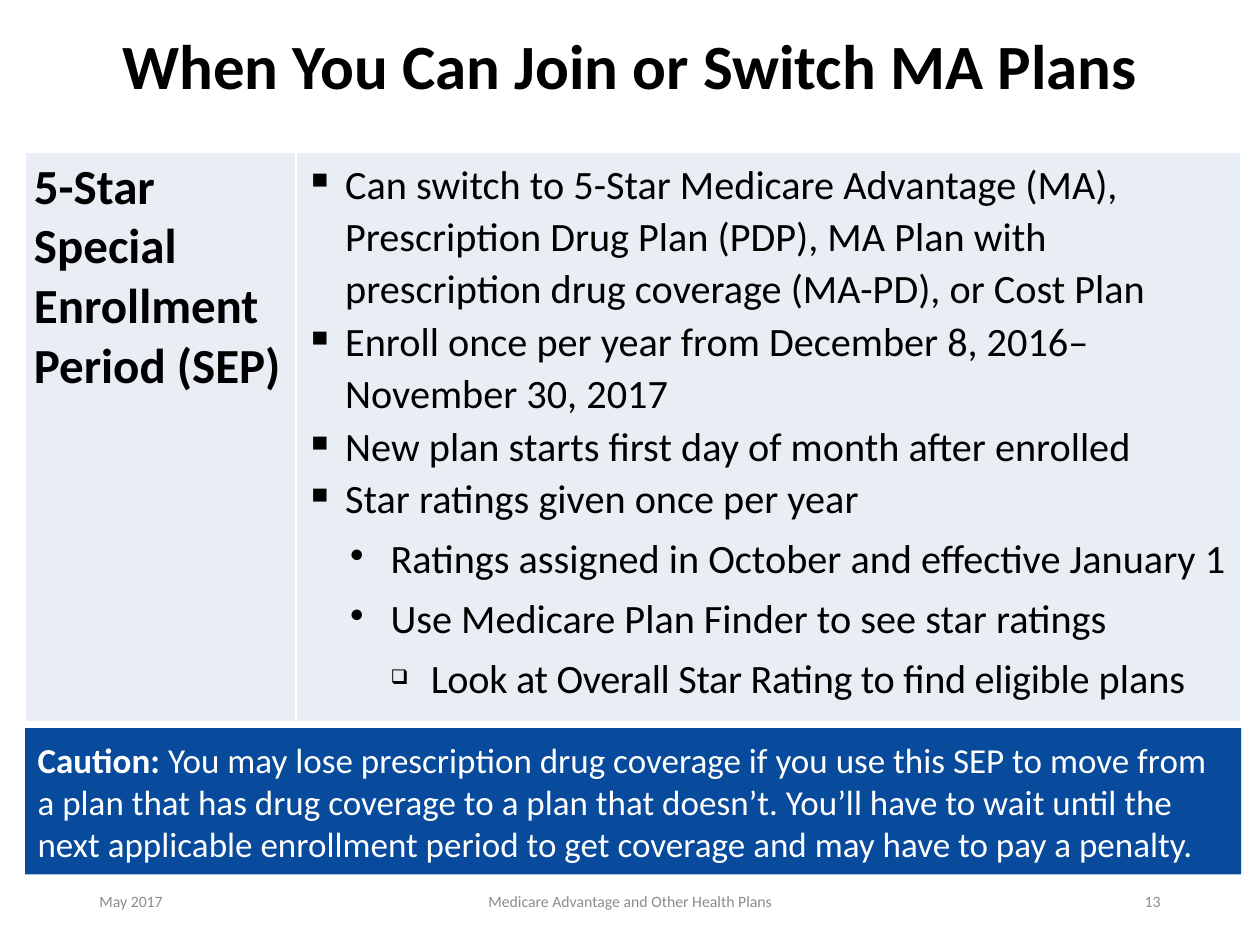
"""Build the slide on joining or switching MA plans."""
from dataclasses import dataclass

from lxml import etree
from pptx import Presentation
from pptx import util as u
from pptx.dml.color import RGBColor
from pptx.enum import shapes, text
from pptx.oxml import ns


@dataclass(frozen=True)
class Theme:
    font: str = "Calibri"
    ink: str = "000000"
    white: str = "FFFFFF"
    cell: str = "E9EDF4"
    caution: str = "084A9C"
    muted: str = "8C8C8C"
    title_size: int = 36
    heading_size: int = 28
    body_size: int = 23
    caution_size: int = 20
    footer_size: int = 9


@dataclass(frozen=True)
class Level:
    bullet: str
    margin: float
    line: int = 0
    before: int = 0
    scale: int = 100


class SlideBuilder:
    def __init__(self, slide, theme):
        self.slide = slide
        self.theme = theme

    def add_run(self, para, words, size, color, bold=False):
        span = para.add_run()
        span.text = words
        span.font.name = self.theme.font
        span.font.size = u.Pt(size)
        span.font.bold = bold
        span.font.color.rgb = RGBColor.from_string(color)
        return span

    def add_text(self, place, words, size, color, align, bold=False, spacing=None):
        box = self.slide.shapes.add_textbox(*map(u.Inches, place))
        frame = box.text_frame
        frame.word_wrap = True
        frame.vertical_anchor = text.MSO_ANCHOR.MIDDLE
        para = frame.paragraphs[0]
        para.alignment = align
        para.line_spacing = spacing
        self.add_run(para, words, size, color, bold)

    def add_banner(self, place, lead, words):
        box = self.slide.shapes.add_shape(
            shapes.MSO_SHAPE.RECTANGLE, *map(u.Inches, place))
        box.shadow.inherit = False
        box.fill.solid()
        box.fill.fore_color.rgb = RGBColor.from_string(self.theme.caution)
        box.line.fill.background()
        frame = box.text_frame
        frame.word_wrap = True
        frame.vertical_anchor = text.MSO_ANCHOR.MIDDLE
        para = frame.paragraphs[0]
        para.alignment = text.PP_ALIGN.LEFT
        for part, bold in ((lead, True), (words, False)):
            self.add_run(para, part, self.theme.caution_size, self.theme.white, bold)

    def add_table(self, place, widths):
        frame = self.slide.shapes.add_table(1, len(widths), *map(u.Inches, place))
        table = frame.table
        table.first_row = table.horz_banding = False
        for column, width in zip(table.columns, widths):
            column.width = u.Inches(width)
        for cell in table.iter_cells():
            self.style_cell(cell)
        return table

    def style_cell(self, cell):
        cell.margin_left = cell.margin_right = u.Inches(0.07)
        cell.margin_top = cell.margin_bottom = u.Inches(0.04)
        properties = cell._tc.get_or_add_tcPr()
        for side, width in (("L", 1), ("R", 1), ("T", 1), ("B", 3)):
            border = etree.SubElement(properties, ns.qn(f"a:ln{side}"), w=str(u.Pt(width)))
            fill = etree.SubElement(border, ns.qn("a:solidFill"))
            etree.SubElement(fill, ns.qn("a:srgbClr"), val=self.theme.white)
        cell.fill.solid()
        cell.fill.fore_color.rgb = RGBColor.from_string(self.theme.cell)

    def add_bullets(self, cell, items):
        frame = cell.text_frame
        for index, (level, parts) in enumerate(items):
            para = frame.add_paragraph() if index else frame.paragraphs[0]
            properties = para._p.get_or_add_pPr()
            properties.set("marL", str(u.Inches(level.margin)))
            properties.set("indent", str(u.Inches(-0.32)))
            if level.scale != 100:
                etree.SubElement(properties, ns.qn("a:buSzPct"), val=str(level.scale * 1000))
            etree.SubElement(properties, ns.qn("a:buChar"), char=level.bullet)
            if level.line:
                para.line_spacing = u.Pt(level.line)
            if level.before:
                para.space_before = u.Pt(level.before)
            for words, tracking in parts:
                span = self.add_run(para, words, self.theme.body_size, self.theme.ink)
                if tracking:
                    span.font._element.set("spc", str(tracking))


def main():
    theme = Theme()
    deck = Presentation()
    deck.slide_width, deck.slide_height = u.Inches(10), u.Inches(7.5)
    page = SlideBuilder(deck.slides.add_slide(deck.slide_layouts[6]), theme)
    align = text.PP_ALIGN

    page.add_text((0, -0.01, 10, 1.11), "When You Can Join or Switch MA Plans",
                  theme.title_size, theme.ink, align.CENTER, True, 0.9)

    table = page.add_table((0.2, 1.21, 9.65, 4.53), (2.15, 7.5))
    page.add_run(table.cell(0, 0).text_frame.paragraphs[0],
                 "5-Star Special Enrollment Period (SEP)",
                 theme.heading_size, theme.ink, True)
    main_point = Level("▪", 0.32, line=30)
    detail = Level("•", 0.68, before=6)
    hint = Level("❑", 1, before=6, scale=50)
    page.add_bullets(table.cell(0, 1), (
        (main_point, [("Can switch to 5-Star Medicare Advantage (MA), Prescription Drug "
                       "Plan (PDP), MA Plan with prescription drug coverage (MA-PD), "
                       "or Cost Plan", 0)]),
        (main_point, [("Enroll once per year from December 8, 2016–November 30, 2017", 0)]),
        (main_point, [("New plan starts first day of month after enrolled", 0)]),
        (main_point, [("Star ratings given once per year", 0)]),
        (detail, [("Ratings assigned in October and effective January 1", 0)]),
        (detail, [("Use Medicare Plan Finder to see star ratings", 0)]),
        (hint, [("Look at Overall Star Rating to find eligible ", -20), ("plans", 0)]),
    ))

    page.add_banner((0.2, 5.78, 9.65, 1.16), "Caution: ",
                    "You may lose prescription drug coverage if you use this SEP to move "
                    "from a plan that has drug coverage to a plan that doesn’t. You’ll have "
                    "to wait until the next applicable enrollment period to get coverage "
                    "and may have to pay a penalty.")

    for left, width, words, side in (
        (0.69, 2.25, "May 2017", align.LEFT),
        (3.31, 3.38, "Medicare Advantage and Other Health Plans", align.CENTER),
        (7.06, 2.25, "13", align.RIGHT),
    ):
        page.add_text((left, 6.95, width, 0.4), words, theme.footer_size, theme.muted, side)

    deck.save("out.pptx")


if __name__ == "__main__":
    main()
